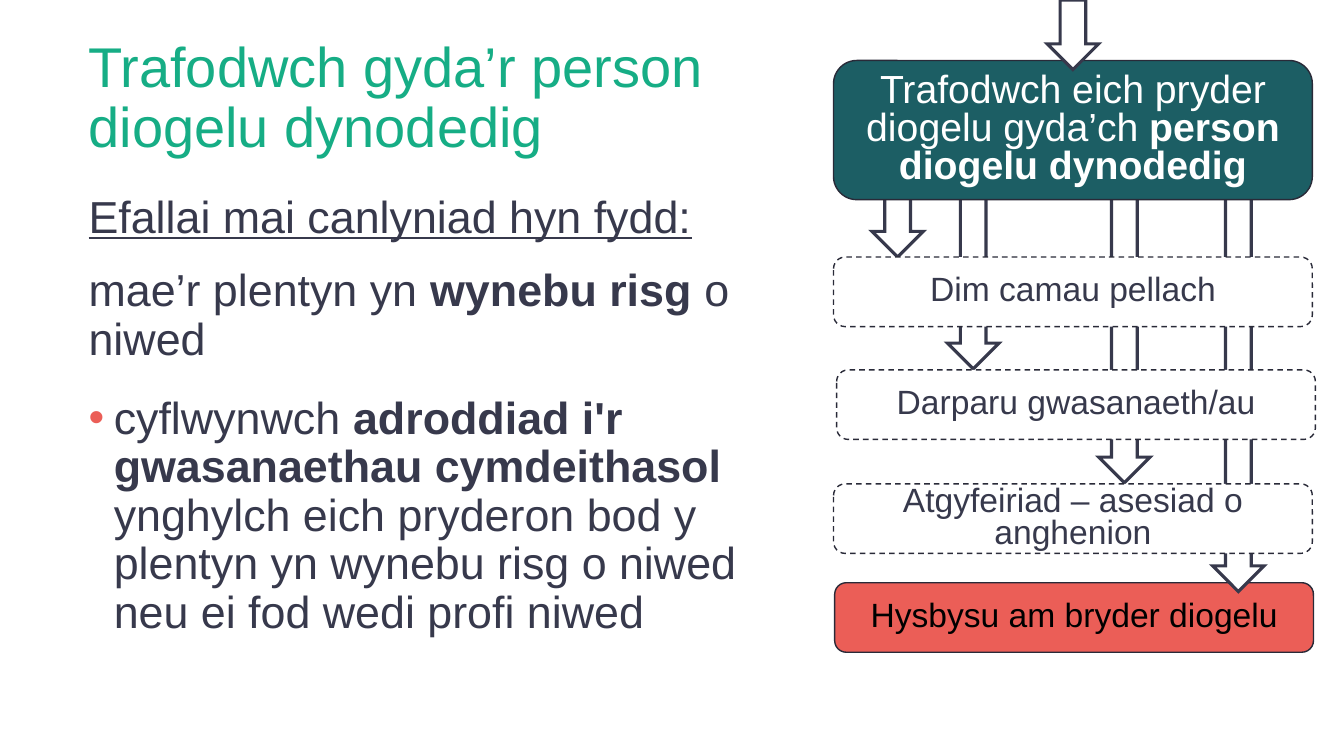
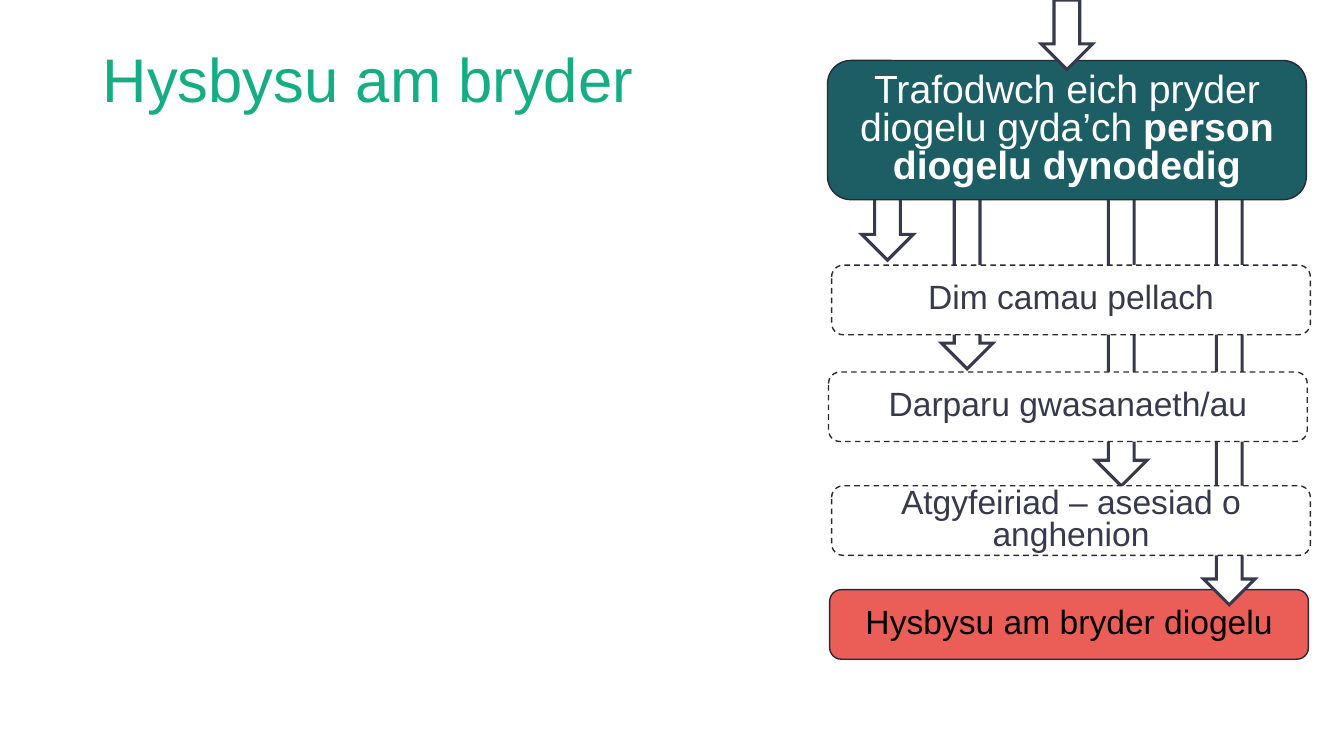
from lxml.etree import SubElement
from pptx import Presentation
from pptx.dml.color import RGBColor
from pptx.enum.dml import MSO_LINE
from pptx.enum.shapes import MSO_SHAPE
from pptx.enum.text import MSO_ANCHOR, PP_ALIGN
from pptx.oxml.ns import qn
from pptx.util import Pt

COLOURS = {
    "title": "16AD85",
    "ink": "37394C",
    "border": "292A38",
    "discuss": "1C5E64",
    "report": "EB5E57",
    "white": "FFFFFF",
    "black": "000000",
}
FONT = "Arial"
BOX_WIDTH, BOX_HEIGHT = 342, 49.7
DISCUSS_TOP, DISCUSS_HEIGHT = 43.2, 99.4
ARROW_WIDTH = 36.7
OUTCOMES = ["Dim camau pellach", "Darparu gwasanaeth/au", "Atgyfeiriad – asesiad o anghenion"]


def colour(name):
    return RGBColor.from_string(COLOURS[name])


class Deck:
    def __init__(self):
        self.presentation = Presentation()
        self.presentation.slide_width = Pt(960)
        self.presentation.slide_height = Pt(540)
        self.slide = None

    def new_slide(self):
        self.slide = self.presentation.slides.add_slide(self.presentation.slide_layouts[6])

    def add_runs(self, paragraph, parts, size, ink, spacing=0.9):
        """Fill a paragraph with parts that alternate between regular and bold."""
        paragraph.line_spacing = spacing
        for index, part in enumerate(parts):
            run = paragraph.add_run()
            run.text = part
            run.font.name = FONT
            run.font.size = Pt(size)
            run.font.bold = index % 2 == 1
            run.font.color.rgb = colour(ink)

    def text_frame(self, left, top, width, height, anchor=MSO_ANCHOR.TOP):
        box = self.slide.shapes.add_textbox(Pt(left), Pt(top), Pt(width), Pt(height))
        frame = box.text_frame
        frame.word_wrap = True
        frame.vertical_anchor = anchor
        return frame

    def title(self, text, left, top, width, height, size):
        frame = self.text_frame(left, top, width, height, MSO_ANCHOR.MIDDLE)
        self.add_runs(frame.paragraphs[0], [text], size, "title")

    def lead(self, text, left, top, width, height):
        paragraph = self.text_frame(left, top, width, height).paragraphs[0]
        self.add_runs(paragraph, [text], 32, "ink")
        paragraph.runs[0].font.underline = True

    def body(self, opening, bullet, left, top, width, height):
        frame = self.text_frame(left, top, width, height)
        first = frame.paragraphs[0]
        first.space_after = Pt(12)
        self.add_runs(first, opening, 32, "ink")
        second = frame.add_paragraph()
        second.space_before = Pt(10)
        second.space_after = Pt(12)
        self.add_bullet(second)
        self.add_runs(second, bullet, 32, "ink")

    def add_bullet(self, paragraph):
        properties = paragraph._p.get_or_add_pPr()
        properties.set("marL", str(Pt(18)))
        properties.set("indent", str(-Pt(18)))
        bullet_colour = SubElement(properties, qn("a:buClr"))
        SubElement(bullet_colour, qn("a:srgbClr"), val=COLOURS["report"])
        SubElement(properties, qn("a:buFont"), typeface=FONT)
        SubElement(properties, qn("a:buChar"), char="•")

    def shape(self, preset, left, top, width, height, fill, line, weight):
        shape = self.slide.shapes.add_shape(preset, Pt(left), Pt(top), Pt(width), Pt(height))
        shape.shadow.inherit = False
        shape.fill.solid()
        shape.fill.fore_color.rgb = colour(fill)
        shape.line.color.rgb = colour(line)
        shape.line.width = Pt(weight)
        return shape

    def arrow(self, left, top, height):
        arrow = self.shape(MSO_SHAPE.DOWN_ARROW, left, top, ARROW_WIDTH, height,
                           "white", "ink", 2.25)
        SubElement(arrow.line._get_or_add_ln(), qn("a:miter"), lim="800000")

    def step(self, parts, left, top, fill, ink, height=BOX_HEIGHT, size=24):
        step = self.shape(MSO_SHAPE.ROUNDED_RECTANGLE, left, top, BOX_WIDTH, height,
                          fill, "border", 1)
        frame = step.text_frame
        frame.word_wrap = True
        frame.vertical_anchor = MSO_ANCHOR.MIDDLE
        paragraph = frame.paragraphs[0]
        paragraph.alignment = PP_ALIGN.CENTER
        self.add_runs(paragraph, parts, size, ink, spacing=0.8)
        return step

    def flow(self, discuss_left, report_at, arrows, outcomes_at):
        """Draw the flowchart; the outcome boxes cover the arrows passing behind them."""
        self.step(["Hysbysu am bryder diogelu"], *report_at, "report", "black")
        for arrow in arrows:
            self.arrow(*arrow)
        self.step(["Trafodwch eich pryder diogelu gyda’ch ", "person diogelu dynodedig"],
                  discuss_left, DISCUSS_TOP, "discuss", "white", DISCUSS_HEIGHT, 28)
        self.arrow(discuss_left + (BOX_WIDTH - ARROW_WIDTH) / 2, 0, BOX_HEIGHT)
        for outcome, (left, top) in zip(OUTCOMES, outcomes_at):
            step = self.step([outcome], left, top, "white", "ink")
            step.line.dash_style = MSO_LINE.DASH


def main():
    deck = Deck()

    deck.new_slide()
    deck.title("Trafodwch gyda’r person diogelu dynodedig", 56.2, 49, 508.3, 43.9, 40)
    deck.lead("Efallai mai canlyniad hyn fydd:", 56.2, 135.4, 493.9, 40.3)
    deck.body(
        ["mae’r plentyn yn ", "wynebu risg ", "o niwed"],
        ["cyflwynwch ", "adroddiad i'r gwasanaethau cymdeithasol ",
         "ynghylch eich pryderon bod y plentyn yn wynebu risg o niwed neu ei fod "
         "wedi profi niwed"],
        56.2, 187.9, 493.9, 298.8)
    deck.flow(
        discuss_left=595.4,
        report_at=(596.2, 416.2),
        arrows=[(866.2, 98.6, 324), (784.8, 111.6, 233.3),
                (676.8, 132.5, 131), (622.8, 133.9, 49.7)],
        outcomes_at=[(595.4, 183.6), (597.6, 264.2), (595.4, 345.6)])

    deck.new_slide()
    deck.flow(
        discuss_left=591.1,
        report_at=(592.6, 421.2),
        arrows=[(859.7, 108, 324), (782.6, 110.2, 236.9),
                (672.5, 132.5, 131), (615.6, 136.1, 49.7)],
        outcomes_at=[(594, 189.4), (591.8, 265.7), (594, 347)])
    deck.title("Hysbysu am bryder", 66.2, 28.8, 502.6, 59.8, 44)

    deck.presentation.save("out.pptx")


if __name__ == "__main__":
    main()
